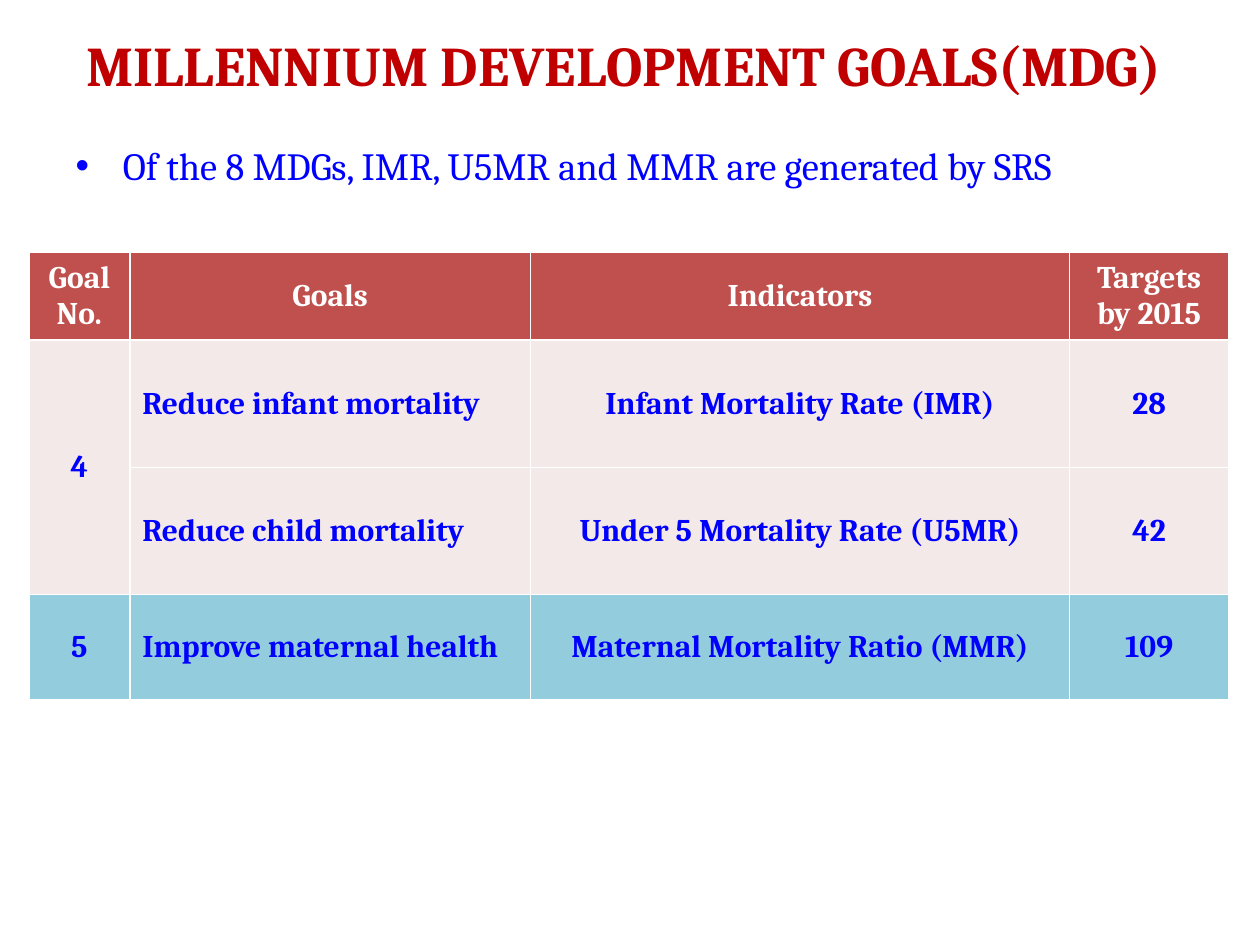
from dataclasses import dataclass

from pptx import Presentation
from pptx.dml.color import RGBColor
from pptx.enum.text import MSO_ANCHOR as Anchor, MSO_AUTO_SIZE as AutoSize, PP_ALIGN as Align
from pptx.util import Inches, Pt


@dataclass(frozen=True)
class Theme:
    font: str = "Cambria"
    title_size: int = 32
    body_size: int = 22
    table_size: int = 18
    title: str = "C00000"
    text: str = "0000FF"
    header_text: str = "FFFFFF"
    header_fill: str = "C0504D"
    goal_4_fill: str = "F4E9E9"
    goal_5_fill: str = "93CDDD"


theme = Theme()


def write(text_frame, text, size, color, bold=False, align=Align.LEFT, anchor=Anchor.TOP):
    text_frame.word_wrap = True
    text_frame.vertical_anchor = anchor
    paragraph = text_frame.paragraphs[0]
    paragraph.alignment = align
    run = paragraph.add_run()
    run.text = text
    run.font.name = theme.font
    run.font.size = Pt(size)
    run.font.bold = bold
    run.font.color.rgb = RGBColor.from_string(color)


def place(shape, left, top, width, height):
    shape.left, shape.top = Inches(left), Inches(top)
    shape.width, shape.height = Inches(width), Inches(height)


presentation = Presentation()
presentation.slide_width, presentation.slide_height = Inches(10), Inches(7.5)
slide = presentation.slides.add_slide(presentation.slide_layouts[1])

# Title
title = slide.shapes.title
place(title, 0.33, 0.19, 9.25, 0.64)
title.text_frame.auto_size = AutoSize.NONE
write(title.text_frame, "MILLENNIUM DEVELOPMENT GOALS(MDG)", theme.title_size, theme.title,
      bold=True, align=Align.CENTER, anchor=Anchor.MIDDLE)

# Bullet list
body = slide.placeholders[1]
place(body, 0.5, 1.08, 9.25, 5.62)
body.text_frame.auto_size = AutoSize.NONE
write(body.text_frame, "Of the 8 MDGs, IMR, U5MR and MMR are generated by SRS",
      theme.body_size, theme.text)

# Goals table: the default table style supplies the white rules
column_widths = [0.8, 3.18, 4.28, 1.26]
row_heights = [0.7, 1.01, 1.01, 0.83]
row_fills = [theme.header_fill, theme.goal_4_fill, theme.goal_4_fill, theme.goal_5_fill]
rows = [
    ["Goal No.", "Goals", "Indicators", "Targets by 2015"],
    ["4", "Reduce infant mortality", "Infant Mortality Rate (IMR)", "28"],
    ["", "Reduce child mortality", "Under 5 Mortality Rate (U5MR)", "42"],
    ["5", "Improve maternal health", "Maternal Mortality Ratio (MMR)", "109"],
]
table = slide.shapes.add_table(
    len(rows), len(column_widths), Inches(0.23), Inches(2),
    Inches(sum(column_widths)), Inches(sum(row_heights))).table
for column, width in zip(table.columns, column_widths):
    column.width = Inches(width)

for row_index, (texts, height, fill) in enumerate(zip(rows, row_heights, row_fills)):
    table.rows[row_index].height = Inches(height)
    is_header = row_index == 0
    for column_index, text in enumerate(texts):
        cell = table.cell(row_index, column_index)
        cell.fill.solid()
        cell.fill.fore_color.rgb = RGBColor.from_string(fill)
        cell.vertical_anchor = Anchor.MIDDLE
        if text:
            is_goal = column_index == 1 and not is_header
            write(cell.text_frame, text, theme.table_size,
                  theme.header_text if is_header else theme.text, bold=True,
                  align=Align.LEFT if is_goal else Align.CENTER, anchor=None)

# Goal 4 covers two rows
table.cell(1, 0).merge(table.cell(2, 0))

presentation.save("out.pptx")
